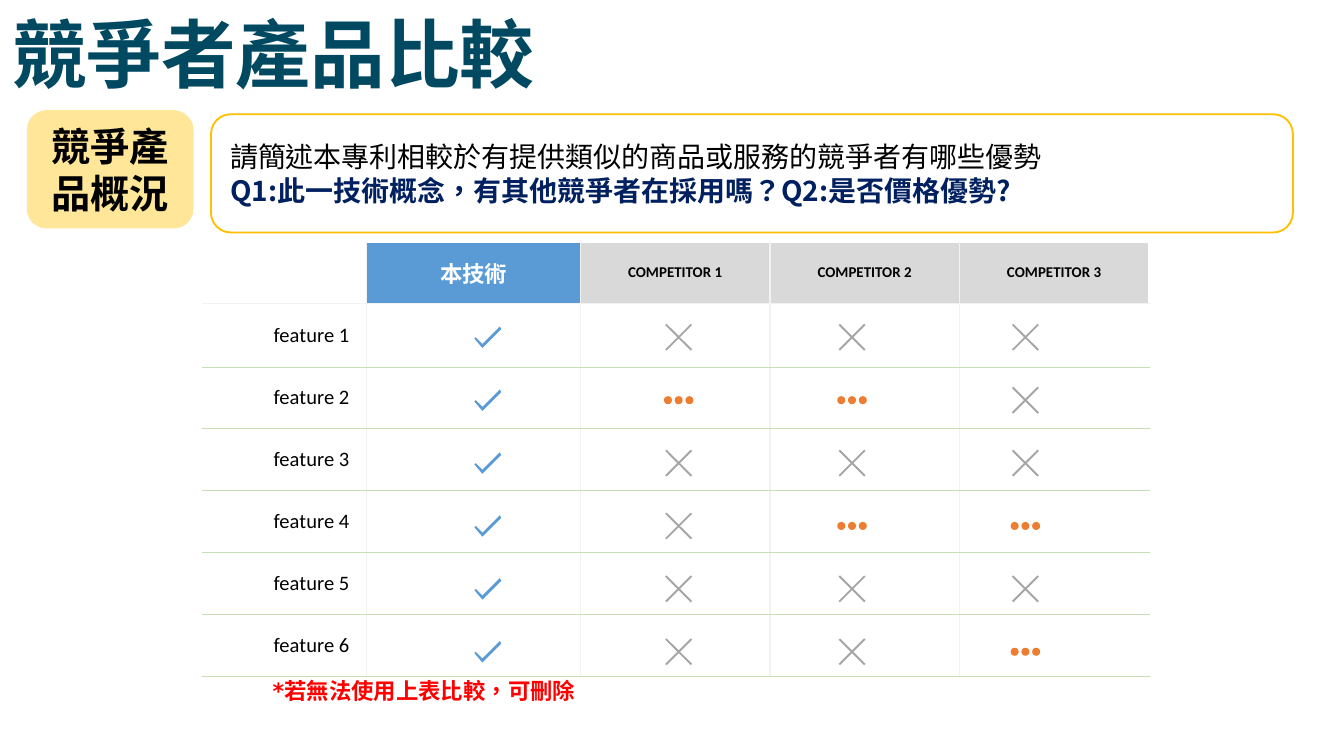
from lxml.etree import SubElement
from pptx import Presentation
from pptx.dml.color import RGBColor
from pptx.enum.lang import MSO_LANGUAGE_ID as Language
from pptx.enum.shapes import MSO_SHAPE as Shape
from pptx.enum.text import MSO_ANCHOR as Anchor, PP_ALIGN as Align
from pptx.oxml.ns import qn
from pptx.util import Inches, Pt

COLUMNS = [1.22, 1.59, 1.41, 1.41, 1.41]
ROW_HEIGHT = 0.46
HEADERS = ["", "本技術", "COMPETITOR 1", "COMPETITOR 2", "COMPETITOR 3"]
RATINGS = [
    ("check", "cross", "cross", "cross"),
    ("check", "dots", "dots", "cross"),
    ("check", "cross", "cross", "cross"),
    ("check", "cross", "dots", "dots"),
    ("check", "cross", "cross", "cross"),
    ("check", "cross", "cross", "dots"),
]
MARK_CENTERS = [2.12, 3.54, 4.83, 6.12]
CHECK = [(0.19, 0), (0.06, 0.13), (0.01, 0.08), (0, 0.09), (0.06, 0.16), (0.2, 0.02)]
CROSS = [(0.2, 0.01), (0.19, 0), (0.1, 0.09), (0.01, 0), (0, 0.01), (0.09, 0.1),
         (0, 0.19), (0.01, 0.2), (0.1, 0.11), (0.19, 0.2), (0.2, 0.19), (0.11, 0.1)]


def color(value):
    """Turn a hex string into a colour."""
    return RGBColor.from_string(value)


def paint(shape, fill=None, line=None):
    """Give a shape a flat fill and outline without shadow."""
    shape.shadow.inherit = False
    if fill:
        shape.fill.solid()
        shape.fill.fore_color.rgb = color(fill)
    else:
        shape.fill.background()
    if line:
        shape.line.color.rgb = color(line)
        shape.line.width = Pt(1)
    else:
        shape.line.fill.background()


def write(para, text, size, ink="000000", bold=False, font="Calibri", align=Align.LEFT):
    """Set the text of a paragraph and format its run."""
    para.text = text
    para.alignment = align
    for span in para.runs:
        span.font.size = Pt(size)
        span.font.name = font
        span.font.bold = bold
        span.font.color.rgb = color(ink)
        span.font.language_id = Language.TRADITIONAL_CHINESE


def add_title(page, left, top, width, height):
    """Place and format the title placeholder."""
    title = page.shapes.title
    title.left, title.top = Inches(left), Inches(top)
    title.width, title.height = Inches(width), Inches(height)
    frame = title.text_frame
    frame.vertical_anchor = Anchor.MIDDLE
    frame.margin_top = frame.margin_bottom = Inches(0.04)
    frame.margin_left = frame.margin_right = Inches(0.09)
    write(frame.paragraphs[0], "競爭者產品比較", 40, "004961", True)
    frame.paragraphs[0].line_spacing = 0.9


def add_panel(page, left, top, width, height, fill=None, line=None):
    """Add a rounded panel and return its text frame."""
    panel = page.shapes.add_shape(
        Shape.ROUNDED_RECTANGLE, Inches(left), Inches(top), Inches(width), Inches(height))
    paint(panel, fill, line)
    panel.text_frame.word_wrap = True
    panel.text_frame.vertical_anchor = Anchor.MIDDLE
    return panel.text_frame


def add_overview(page, left, top):
    """Add the section label and the questions beside it."""
    label = add_panel(page, left, top, 1.24, 0.88, fill="FFE699")
    write(label.paragraphs[0], "競爭產品概況", 21, bold=True, align=Align.CENTER)
    questions = add_panel(page, left + 1.37, top + 0.03, 8.05, 0.88, line="FFC000")
    write(questions.paragraphs[0],
          "請簡述本專利相較於有提供類似的商品或服務的競爭者有哪些優勢", 15)
    write(questions.add_paragraph(),
          "Q1:此一技術概念，有其他競爭者在採用嗎？Q2:是否價格優勢?",
          15, "002060", True, "Noto Sans CJK SC")


def set_border(cell, side, ink, width):
    """Draw one border of a table cell."""
    line = SubElement(cell._tc.get_or_add_tcPr(), qn(f"a:ln{side}"), w=str(Pt(width)))
    fill = SubElement(line, qn("a:solidFill"))
    SubElement(fill, qn("a:srgbClr"), val=ink)


def format_cell(cell, row, column):
    """Fill a table cell and set its text and borders."""
    white, pale, green = ("FFFFFF", 1), ("F2F2F2", 0.75), ("C5E0B4", 0.25)
    set_border(cell, "L", *(white if column == 0 else pale))
    set_border(cell, "R", *(white if column == len(COLUMNS) - 1 else pale))
    set_border(cell, "T", *(white if row == 0 else pale if row == 1 else green))
    set_border(cell, "B", *(pale if row == 0 else green))
    cell.vertical_anchor = Anchor.MIDDLE
    cell.margin_left = Inches(0.06)
    cell.margin_right = Inches(0.13 if column == 0 else 0.06)
    cell.margin_top = cell.margin_bottom = Inches(0.03)
    para = cell.text_frame.paragraphs[0]
    fill = "FFFFFF"
    if row == 0 and column == 1:
        fill = "5B9BD5"
        write(para, HEADERS[column], 12, "FFFFFF", True, align=Align.CENTER)
    elif row == 0 and column > 1:
        fill = "D9D9D9"
        write(para, HEADERS[column], 8, bold=True, align=Align.CENTER)
    elif row > 0 and column == 0:
        write(para, f"feature {row}", 11, align=Align.RIGHT)
    if row == column == 0:
        cell.fill.background()
    else:
        cell.fill.solid()
        cell.fill.fore_color.rgb = color(fill)


def add_outline(page, left, top, points, fill):
    """Add a closed outline from points relative to a corner."""
    corners = [(Inches(left + x), Inches(top + y)) for x, y in points]
    builder = page.shapes.build_freeform(*corners[0])
    builder.add_line_segments(corners[1:])
    paint(builder.convert_to_shape(), fill)


def add_mark(page, kind, center_x, center_y):
    """Add a check, a cross or three dots around a centre."""
    if kind == "check":
        add_outline(page, center_x - 0.1, center_y - 0.08, CHECK, "5B9BD5")
    elif kind == "cross":
        add_outline(page, center_x - 0.1, center_y - 0.1, CROSS, "A5A5A5")
    else:
        group = page.shapes.add_group_shape()
        for step in (-1, 0, 1):
            dot = group.shapes.add_shape(
                Shape.OVAL, Inches(center_x + 0.08 * step - 0.03),
                Inches(center_y - 0.03), Inches(0.06), Inches(0.06))
            paint(dot, "ED7D31")


def add_comparison(page, left, top):
    """Add the feature table and the rating marks over it."""
    rows = len(RATINGS) + 1
    table = page.shapes.add_table(
        rows, len(COLUMNS), Inches(left), Inches(top),
        Inches(sum(COLUMNS)), Inches(ROW_HEIGHT * rows)).table
    for column, width in enumerate(COLUMNS):
        table.columns[column].width = Inches(width)
    for row in range(rows):
        table.rows[row].height = Inches(0.47 if row == 1 else ROW_HEIGHT)
        for column in range(len(COLUMNS)):
            format_cell(table.cell(row, column), row, column)
    for row, kinds in enumerate(RATINGS):
        for kind, center in zip(kinds, MARK_CENTERS):
            add_mark(page, kind, left + center, top + 0.71 + 2.34 / 5 * row)


def add_note(page, left, top, width, height):
    """Add the red remark below the table."""
    box = page.shapes.add_textbox(Inches(left), Inches(top), Inches(width), Inches(height))
    box.text_frame.word_wrap = True
    para = box.text_frame.paragraphs[0]
    write(para, "*若無法使用上表比較，可刪除", 12, "FF0000", True, "DejaVu Sans")
    properties = para._p.get_or_add_pPr()
    properties.set("marL", str(Inches(0.2)))
    properties.set("indent", str(Inches(-0.2)))


def main():
    """Build the slide and save the deck."""
    deck = Presentation()
    deck.slide_width = Inches(10)
    deck.slide_height = deck.slide_width * 9 // 16
    page = deck.slides.add_slide(deck.slide_layouts[5])
    add_title(page, 0, 0.05, 8.62, 0.77)
    add_comparison(page, 1.51, 1.8)
    add_overview(page, 0.2, 0.82)
    add_note(page, 1.93, 4.99, 2.58, 0.3)
    deck.save("out.pptx")


if __name__ == "__main__":
    main()
